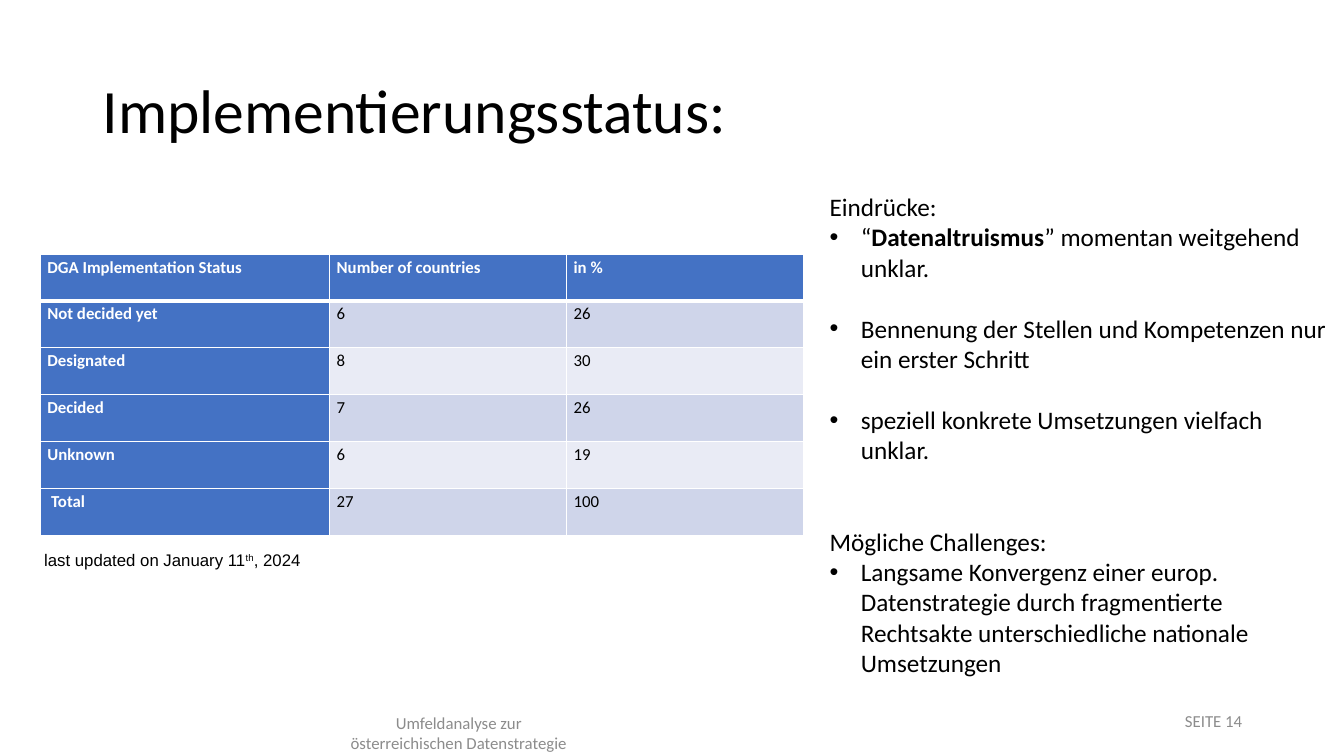
"""Slide on the DGA implementation status: table, impressions and footer."""
from lxml.etree import SubElement as Sub
from pptx import Presentation
from pptx.dml.color import RGBColor as RGB
from pptx.enum.text import MSO_ANCHOR as Anchor, PP_ALIGN as Align
from pptx.oxml.ns import qn
from pptx.util import Inches, Pt

COLORS = {"black": "000000", "white": "FFFFFF", "gray": "8C8C8C",
          "blue": "4472C4", "dark": "CFD5EA", "light": "E9EBF5"}


def style(para, size, color="black", font="Calibri", bold=False):
    for run in para.runs:
        run.font.size = Pt(size)
        run.font.name = font
        run.font.bold = bold
        run.font.color.rgb = RGB.from_string(COLORS[color])


def add_box(left, top, width, height, anchor=Anchor.MIDDLE):
    box = slide.shapes.add_textbox(*map(Inches, (left, top, width, height)))
    frame = box.text_frame
    frame.word_wrap = True
    frame.vertical_anchor = anchor
    return frame


deck = Presentation()
deck.slide_width, deck.slide_height = Inches(13.33), Inches(7.5)
slide = deck.slides.add_slide(deck.slide_layouts[6])

title = add_box(0.92, 0.4, 11.5, 1.45).paragraphs[0]
title.text = "Implementierungsstatus:"
title.line_spacing = 0.9
style(title, 44)

rows = [
    ("DGA Implementation Status", "Number of countries", "in %"),
    ("Not decided yet", "6", "26"),
    ("Designated", "8", "30"),
    ("Decided", "7", "26"),
    ("Unknown", "6", "19"),
    (" Total", "27", "100"),
]
table = slide.shapes.add_table(len(rows), 3, Inches(0.4), Inches(2.52),
                               Inches(7.57), Inches(2.79)).table
for col, width in zip(table.columns, (2.87, 2.35, 2.35)):
    col.width = Inches(width)
for i, row in enumerate(rows):
    for j, text in enumerate(row):
        cell = table.cell(i, j)
        head = i == 0 or j == 0
        cell.margin_left = cell.margin_right = Inches(0.07)
        cell.margin_top = cell.margin_bottom = 0
        para = cell.text_frame.paragraphs[0]
        para.text = text
        para.line_spacing = 1.15
        para.space_after = Pt(8)
        style(para, 12, "white" if head else "black", bold=head)
        props = cell._tc.get_or_add_tcPr()
        for side in "LRTB":
            thick = (i, side) in ((0, "B"), (1, "T"))
            line = Sub(props, qn(f"a:ln{side}"), w=str(Pt(3 if thick else 1)))
            Sub(Sub(line, qn("a:solidFill")), qn("a:srgbClr"), val=COLORS["white"])
        cell.fill.solid()
        tone = "blue" if head else "dark" if i % 2 else "light"
        cell.fill.fore_color.rgb = RGB.from_string(COLORS[tone])

frame = add_box(0.34, 5.4, 2.87, 0.3)
frame.word_wrap = False
note = frame.paragraphs[0]
for text in ("last updated on January 11", "th", ", 2024"):
    note.add_run().text = text
style(note, 12, font="Arial")
note.runs[1]._r.get_or_add_rPr().set("baseline", "30000")

footers = [
    ("SEITE 14", (9.42, 6.95, 3, 0.4), Align.RIGHT),
    ("Umfeldanalyse zur\nösterreichischen Datenstrategie",
     (2.44, 7.1, 4.22, 0.34), Align.CENTER),
]
for text, place, align in footers:
    para = add_box(*place).paragraphs[0]
    para.text = text
    para.alignment = align
    style(para, 12, "gray")

points = [
    (("Eindrücke:",), False, 0),
    (("“", "Datenaltruismus", "” momentan weitgehend unklar."), True, 22),
    (("Bennenung der Stellen und Kompetenzen nur ein erster Schritt",), True, 22),
    (("speziell konkrete Umsetzungen vielfach unklar.",), True, 44),
    (("Mögliche Challenges:",), False, 0),
    (("Langsame Konvergenz einer europ. Datenstrategie durch fragmentierte "
      "Rechtsakte unterschiedliche nationale Umsetzungen",), True, 0),
]
frame = add_box(8.13, 1.85, 5.14, 5.55, Anchor.TOP)
for i, (parts, bullet, gap) in enumerate(points):
    para = frame.add_paragraph() if i else frame.paragraphs[0]
    for text in parts:
        para.add_run().text = text
    para.space_after = Pt(gap)
    style(para, 18)
    if len(parts) > 1:
        para.runs[1].font.bold = True
    if bullet:
        props = para._p.get_or_add_pPr()
        props.set("marL", str(Inches(0.31)))
        props.set("indent", str(-Inches(0.31)))
        Sub(props, qn("a:buFont"), typeface="Arial")
        Sub(props, qn("a:buChar"), char="•")

deck.save("out.pptx")
